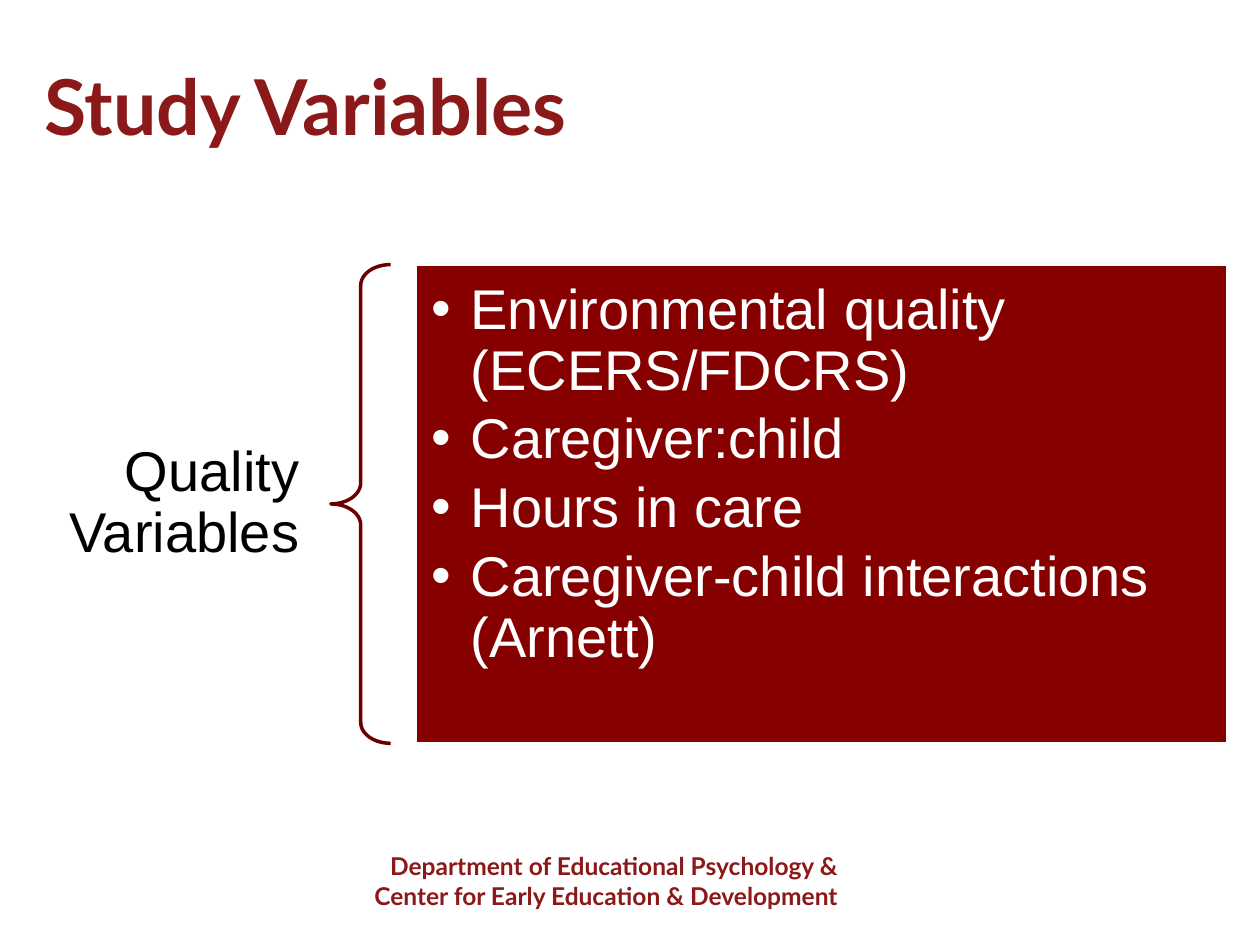
from pptx import Presentation
from pptx.dml.color import RGBColor
from pptx.enum.shapes import MSO_SHAPE
from pptx.enum.text import MSO_ANCHOR, MSO_AUTO_SIZE, PP_ALIGN
from pptx.oxml.ns import qn
from pptx.util import Pt
from lxml.etree import SubElement

COLORS = {
    "heading": "8C1919",
    "panel": "860000",
    "brace": "6B0000",
    "white": "FFFFFF",
    "black": "000000",
}
HEADING = {"name": "Lato", "bold": True}
PLAIN = {"name": "Arial", "bold": False}
TOP, HEIGHT = 151.2, 273.6


def color(name):
    return RGBColor.from_string(COLORS[name])


def place(shape, left, top, width, height):
    bounds = {"left": left, "top": top, "width": width, "height": height}
    for key, value in bounds.items():
        setattr(shape, key, Pt(value))


def set_outline(shape, name):
    shape.line.color.rgb = color(name)
    shape.line.width = Pt(2)


def add_bullet(para, indent):
    properties = para._p.get_or_add_pPr()
    properties.set("marL", str(Pt(indent)))
    properties.set("indent", str(Pt(-indent)))
    SubElement(properties, qn("a:buChar")).set("char", "•")


def write(shape, lines, font, size, tint, anchor, insets, align=PP_ALIGN.LEFT,
          line_spacing=1.0, space_after=0, bullet_indent=0):
    frame = shape.text_frame
    horizontal, vertical = insets
    frame_format = {
        "word_wrap": True,
        "auto_size": MSO_AUTO_SIZE.NONE,
        "vertical_anchor": anchor,
        "margin_left": Pt(horizontal),
        "margin_right": Pt(horizontal),
        "margin_top": Pt(vertical),
        "margin_bottom": Pt(vertical),
    }
    for key, value in frame_format.items():
        setattr(frame, key, value)
    para_format = {
        "alignment": align,
        "line_spacing": line_spacing,
        "space_before": Pt(0),
        "space_after": Pt(space_after),
    }
    for index, line in enumerate(lines):
        para = frame.paragraphs[0] if index == 0 else frame.add_paragraph()
        for key, value in para_format.items():
            setattr(para, key, value)
        if bullet_indent:
            add_bullet(para, bullet_indent)
        span = para.add_run()
        span.text = line
        for key, value in {**font, "size": Pt(size)}.items():
            setattr(span.font, key, value)
        span.font.color.rgb = color(tint)


def add_title(page):
    title = page.shapes.title
    place(title, 18, 30, 684, 60)
    write(title, ["Study Variables"], HEADING, 44, "heading",
          MSO_ANCHOR.MIDDLE, (7.2, 3.6))


def add_label(page):
    box = page.shapes.add_textbox(Pt(18), Pt(248.4), Pt(171), Pt(79.2))
    write(box, ["Quality Variables"], PLAIN, 32, "black", MSO_ANCHOR.MIDDLE,
          (18, 6.5), PP_ALIGN.RIGHT, line_spacing=0.9)


def add_brace(page):
    brace = page.shapes.add_shape(
        MSO_SHAPE.LEFT_BRACE, Pt(189), Pt(TOP), Pt(34.2), Pt(HEIGHT))
    brace.shadow.inherit = False
    brace.adjustments[0] = 0.35
    brace.adjustments[1] = 0.5
    brace.fill.background()
    set_outline(brace, "brace")


def add_variables(page):
    panel = page.placeholders[1]
    place(panel, 237, TOP, 464.4, HEIGHT)
    panel.fill.solid()
    panel.fill.fore_color.rgb = color("panel")
    set_outline(panel, "white")
    variables = [
        "Environmental quality (ECERS/FDCRS)",
        "Caregiver:child",
        "Hours in care",
        "Caregiver-child interactions (Arnett)",
    ]
    write(panel, variables, PLAIN, 32, "white", MSO_ANCHOR.TOP, (9.4, 9.4),
          line_spacing=0.9, space_after=4.8, bullet_indent=22.5)


def add_footer(page):
    box = page.shapes.add_textbox(Pt(126), Pt(483), Pt(360), Pt(41))
    lines = [
        "Department of Educational Psychology &",
        "Center for Early Education & Development",
    ]
    write(box, lines, HEADING, 14, "heading", MSO_ANCHOR.TOP, (7.2, 3.6),
          PP_ALIGN.RIGHT)


def main():
    deck = Presentation()
    deck.slide_width, deck.slide_height = Pt(720), Pt(540)
    page = deck.slides.add_slide(deck.slide_layouts[1])
    add_footer(page)
    add_title(page)
    add_label(page)
    add_brace(page)
    add_variables(page)
    deck.save("out.pptx")


if __name__ == "__main__":
    main()
